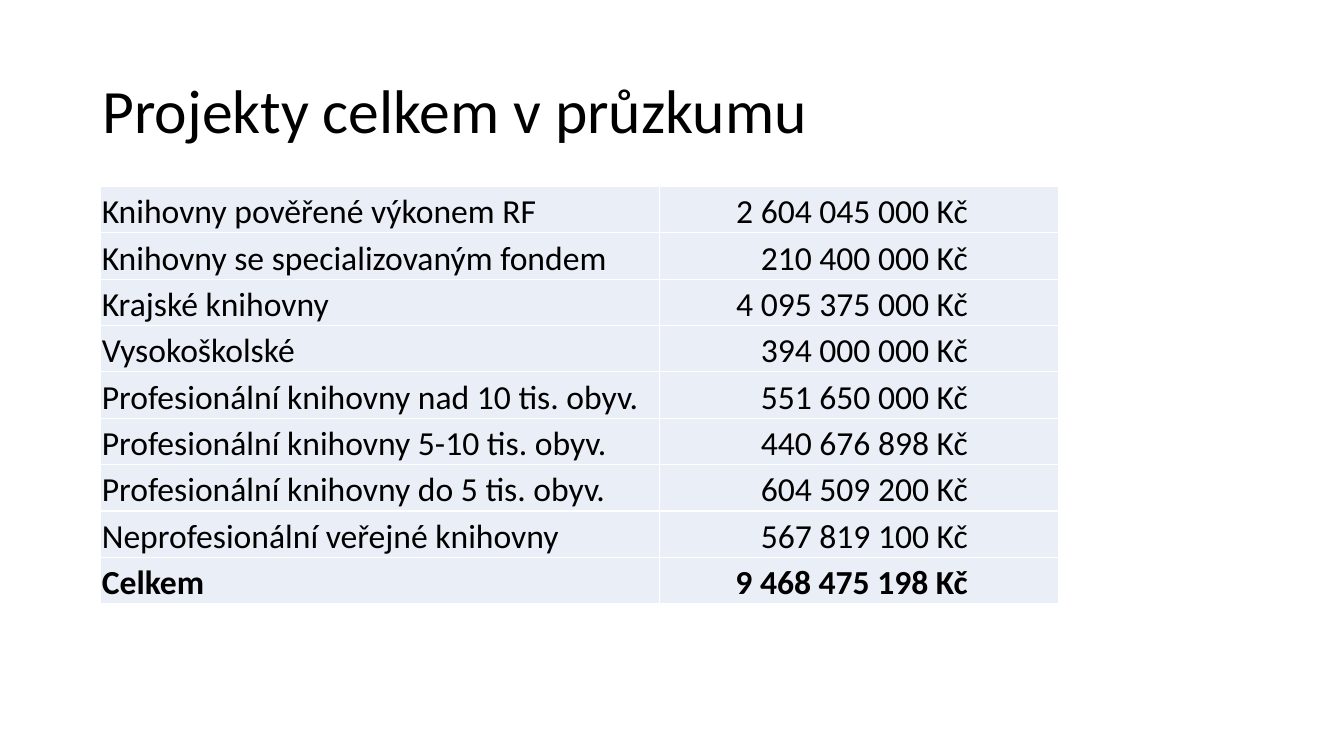
"""Build the slide that totals the library projects found in the survey."""
from dataclasses import dataclass

from lxml import etree
from pptx import Presentation
from pptx import util as u
from pptx.dml.color import RGBColor
from pptx.enum import text
from pptx.oxml.ns import qn

EMU_PER_PX = 9144


@dataclass(frozen=True)
class Theme:
    font: str = "Calibri"
    ink: str = "000000"
    cell: str = "EAEFF7"
    border: str = "FFFFFF"
    title_size: int = 44
    table_size: int = 24
    border_width: int = 1


@dataclass(frozen=True)
class Box:
    left: int
    top: int
    width: int
    height: int


@dataclass(frozen=True)
class Budget:
    label: str
    amount: str
    bold: bool = False


THEME = Theme()
TITLE_BOX = Box(92, 40, 1150, 145)
COLUMN_WIDTHS = (554, 396)
ROW_HEIGHT = 46
CELL_INSET = 1
AMOUNT_INSET = 90
BUDGETS = (
    Budget("Knihovny pověřené výkonem RF", "2 604 045 000 Kč"),
    Budget("Knihovny se specializovaným fondem", "210 400 000 Kč"),
    Budget("Krajské knihovny", "4 095 375 000 Kč"),
    Budget("Vysokoškolské", "394 000 000 Kč"),
    Budget("Profesionální knihovny nad 10 tis. obyv.", "551 650 000 Kč"),
    Budget("Profesionální knihovny 5-10 tis. obyv.", "440 676 898 Kč"),
    Budget("Profesionální knihovny do 5 tis. obyv.", "604 509 200 Kč"),
    Budget("Neprofesionální veřejné knihovny", "567 819 100 Kč"),
    Budget("Celkem", "9 468 475 198 Kč", bold=True),
)
TABLE_BOX = Box(100, 185, sum(COLUMN_WIDTHS), ROW_HEIGHT * len(BUDGETS))


def px(length: int) -> u.Emu:
    return u.Emu(length * EMU_PER_PX)


def place(box: Box) -> tuple[u.Emu, ...]:
    return px(box.left), px(box.top), px(box.width), px(box.height)


def style_paragraph(paragraph, size: int, bold: bool = False) -> None:
    for run in paragraph.runs:
        run.font.name = THEME.font
        run.font.size = u.Pt(size)
        run.font.bold = bold
        run.font.color.rgb = RGBColor.from_string(THEME.ink)


def draw_title(slide, title: str) -> None:
    frame = slide.shapes.add_textbox(*place(TITLE_BOX)).text_frame
    frame.word_wrap = True
    frame.vertical_anchor = text.MSO_ANCHOR.MIDDLE
    frame.text = title
    paragraph = frame.paragraphs[0]
    paragraph.line_spacing = 0.9
    style_paragraph(paragraph, THEME.title_size)


def add_borders(cell) -> None:
    properties = cell._tc.get_or_add_tcPr()
    for index, side in enumerate(("lnL", "lnR", "lnT", "lnB")):
        line = etree.Element(qn(f"a:{side}"), w=str(u.Pt(THEME.border_width)))
        fill = etree.SubElement(line, qn("a:solidFill"))
        etree.SubElement(fill, qn("a:srgbClr"), val=THEME.border)
        properties.insert(index, line)


def fill_cell(cell, content: str, bold: bool, is_amount: bool) -> None:
    cell.text_frame.text = content
    cell.vertical_anchor = text.MSO_ANCHOR.BOTTOM
    cell.margin_left = cell.margin_top = px(CELL_INSET)
    cell.margin_right = px(AMOUNT_INSET if is_amount else CELL_INSET)
    cell.margin_bottom = 0
    cell.fill.solid()
    cell.fill.fore_color.rgb = RGBColor.from_string(THEME.cell)
    add_borders(cell)
    paragraph = cell.text_frame.paragraphs[0]
    paragraph.alignment = text.PP_ALIGN.RIGHT if is_amount else text.PP_ALIGN.LEFT
    style_paragraph(paragraph, THEME.table_size, bold)


def draw_table(slide, budgets: tuple[Budget, ...]) -> None:
    frame = slide.shapes.add_table(len(budgets), len(COLUMN_WIDTHS), *place(TABLE_BOX))
    table = frame.table
    table.first_row = table.horz_banding = False
    for column, width in zip(table.columns, COLUMN_WIDTHS):
        column.width = px(width)
    for row, budget in zip(table.rows, budgets):
        row.height = px(ROW_HEIGHT)
        label, amount = row.cells
        fill_cell(label, budget.label, budget.bold, is_amount=False)
        fill_cell(amount, budget.amount, budget.bold, is_amount=True)


def main() -> None:
    presentation = Presentation()
    presentation.slide_width = px(1333)
    presentation.slide_height = px(750)
    slide = presentation.slides.add_slide(presentation.slide_layouts[6])
    draw_title(slide, "Projekty celkem v průzkumu")
    draw_table(slide, BUDGETS)
    presentation.save("out.pptx")


if __name__ == "__main__":
    main()
